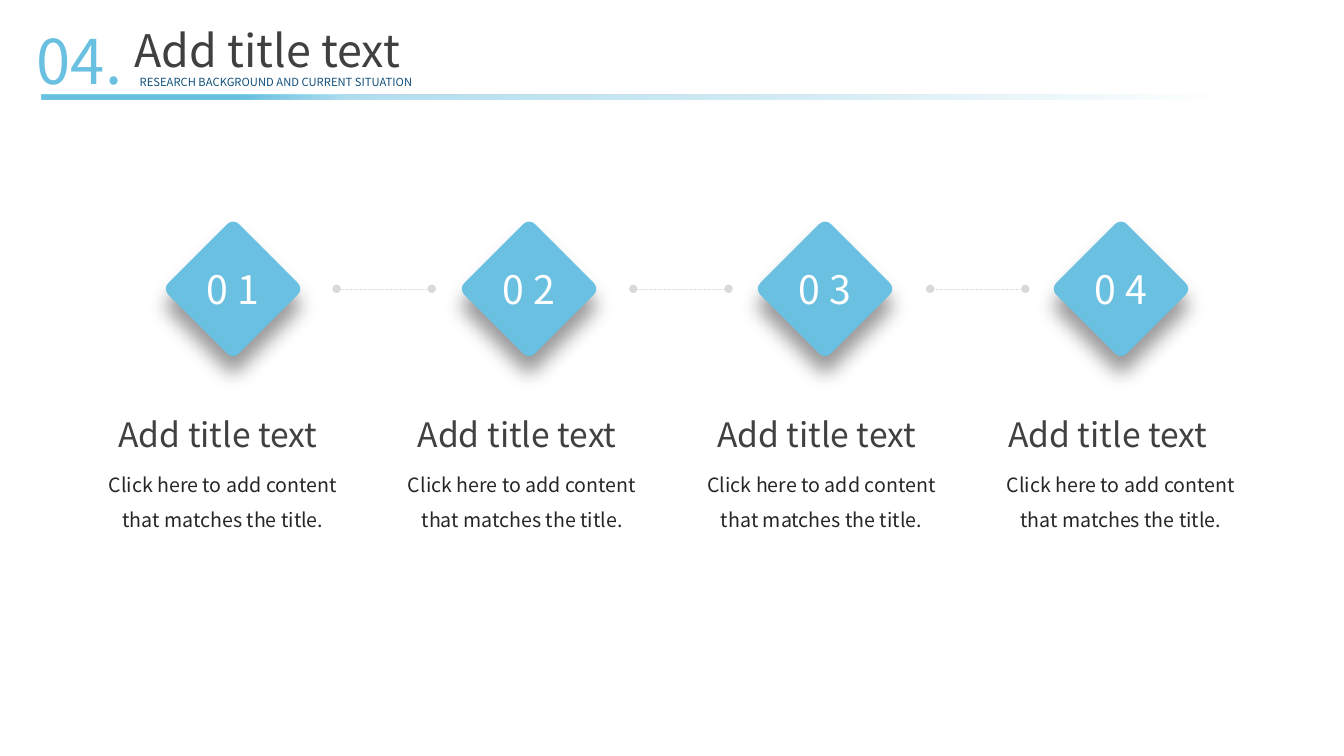
from lxml import etree
from pptx import Presentation
from pptx.dml.color import RGBColor
from pptx.enum.dml import MSO_LINE
from pptx.enum.shapes import MSO_CONNECTOR, MSO_SHAPE
from pptx.enum.text import MSO_ANCHOR, MSO_AUTO_SIZE, PP_ALIGN
from pptx.oxml.ns import qn
from pptx.util import Pt

RECTANGLE = MSO_SHAPE.RECTANGLE
STRAIGHT = MSO_CONNECTOR.STRAIGHT
DASH = MSO_LINE.DASH
TOP, MIDDLE = MSO_ANCHOR.TOP, MSO_ANCHOR.MIDDLE
GROW, FIXED = MSO_AUTO_SIZE.SHAPE_TO_FIT_TEXT, MSO_AUTO_SIZE.NONE
LEFT, CENTER, JUSTIFY = PP_ALIGN.LEFT, PP_ALIGN.CENTER, PP_ALIGN.JUSTIFY

FONT = "Noto Sans CJK SC"
BLUE, NAVY, WHITE = "69C0E1", "10507E", "FFFFFF"
DARK, INK, PALE = "404040", "262626", "D9D9D9"
TITLE = "Add title text"
CONTENT = "Click here to add content that matches the title."
FADE = [(1, 0), (37, 30), (74, 52), (83, 100), (100, 100)]  # position, opacity
STEPS = 4


def color(hex_code):
    return RGBColor.from_string(hex_code)


def add_xml(parent, tag, **attributes):
    return etree.SubElement(parent, qn(tag), {k: str(v) for k, v in attributes.items()})


def write(shape, text, size, hex_code, align, anchor=TOP, spacing=None, fit=GROW):
    frame = shape.text_frame
    frame.word_wrap = True
    frame.auto_size = fit
    frame.vertical_anchor = anchor
    frame.text = text
    paragraph = frame.paragraphs[0]
    paragraph.alignment = align
    if spacing:
        paragraph.line_spacing = spacing
    font = paragraph.runs[0].font
    font.name, font.size, font.color.rgb = FONT, Pt(size), color(hex_code)


def add_text(shapes, box, *text_format, **options):
    write(shapes.add_textbox(*map(Pt, box)), *text_format, **options)


def add_header(slide, left, top):
    title = slide.shapes.title
    title.left, title.top = Pt(left + 69.8), Pt(top - 0.6)
    title.width, title.height = Pt(286), Pt(46)
    write(title, TITLE, 32, DARK, JUSTIFY)
    add_text(slide.shapes, (left, top, 79, 60.5), "04.", 44, BLUE, LEFT)
    add_text(slide.shapes, (left + 73.5, top + 37.4, 310, 17),
             "RESEARCH BACKGROUND AND CURRENT SITUATION", 8, NAVY, JUSTIFY)
    add_fading_bar(slide, left + 10.5, top + 54.5, 847, 3.6)


def add_fading_bar(slide, left, top, width, height):
    bar = slide.shapes.add_shape(RECTANGLE, Pt(left), Pt(top), Pt(width), Pt(height))
    bar.shadow.inherit = False
    bar.line.fill.background()
    bar.fill.gradient()
    bar.fill.gradient_angle = 180
    stops = bar._element.spPr.find(".//" + qn("a:gsLst"))
    for stop in list(stops):
        stops.remove(stop)
    for position, opacity in FADE:
        stop = add_xml(stops, "a:gs", pos=position * 1000)
        tint = add_xml(stop, "a:srgbClr", val=BLUE)
        add_xml(tint, "a:alpha", val=opacity * 1000)


def round_corners(diamond, half):
    """Replace the sharp outline by four edges joined by Bezier corners."""
    outline = diamond._element.spPr.find(".//" + qn("a:path"))
    for segment in list(outline):
        outline.remove(segment)
    corner = [(-4.2, 2.4 - half), (-1.8, -half), (1.8, -half), (4.2, 2.4 - half)]
    for i in range(4):
        edge = add_xml(outline, "a:lnTo" if i else "a:moveTo")
        curve = add_xml(outline, "a:cubicBezTo")
        for parent, (x, y) in zip((edge, curve, curve, curve), corner):
            add_xml(parent, "a:pt", x=Pt(half + x), y=Pt(half + y))
        corner = [(-y, x) for x, y in corner]
    add_xml(outline, "a:close")


def add_diamond(slide, left, top, size, number):
    half = size / 2
    builder = slide.shapes.build_freeform(Pt(left + half), Pt(top))
    builder.add_line_segments([(Pt(left + x), Pt(top + y))
                               for x, y in ((size, half), (half, size), (0, half))])
    diamond = builder.convert_to_shape()
    round_corners(diamond, half)
    diamond.fill.solid()
    diamond.fill.fore_color.rgb = color(BLUE)
    diamond.line.fill.background()
    diamond.shadow.inherit = False
    effects = diamond._element.spPr.find(qn("a:effectLst"))
    shadow = add_xml(effects, "a:outerShdw", blurRad=Pt(14), dist=Pt(12),
                     dir=90 * 60000, algn="t", rotWithShape=0)
    add_xml(add_xml(shadow, "a:srgbClr", val="000000"), "a:alpha", val=40000)
    write(diamond, number, 28, WHITE, CENTER, MIDDLE, fit=FIXED)


def add_dotted_link(slide, left, middle, length):
    link = slide.shapes.add_connector(STRAIGHT, Pt(left), Pt(middle), Pt(left + length), Pt(middle))
    link.line.width = Pt(0.25)
    link.line.color.rgb = color(PALE)
    link.line.dash_style = DASH
    for end in ("a:headEnd", "a:tailEnd"):
        add_xml(link.line._get_or_add_ln(), end, type="oval")
    add_xml(link._element.spPr, "a:effectLst")


def add_caption(slide, left, top, heading_left, heading_width):
    caption = slide.shapes.add_group_shape().shapes
    add_text(caption, (left, top + 33.5, 197.3, 55.5), CONTENT, 14, INK, CENTER, spacing=1.5)
    add_text(caption, (heading_left, top, heading_width, 36), TITLE, 24, DARK, CENTER)


def add_steps(slide, left, top):
    size = 97.2
    for i in range(STEPS):
        add_diamond(slide, left + 57.3 + i * 211.4, top, size, f"0 {i + 1}")
    for i in range(STEPS - 1):
        add_dotted_link(slide, left + 179.8 + i * 212, top + size / 2, 68)
    for i in range(STEPS):
        caption_left = left + i * 213.8
        last = i == STEPS - 1
        heading = (caption_left, 178.6) if last else (caption_left + 11.5, 167)
        add_caption(slide, caption_left, top + 134.6, *heading)


def main():
    deck = Presentation()
    deck.slide_width, deck.slide_height = Pt(960), Pt(540)
    slide = deck.slides.add_slide(deck.slide_layouts[5])
    add_header(slide, 19.2, 13)
    add_steps(slide, 60.6, 157.7)
    deck.save("out.pptx")


if __name__ == "__main__":
    main()
